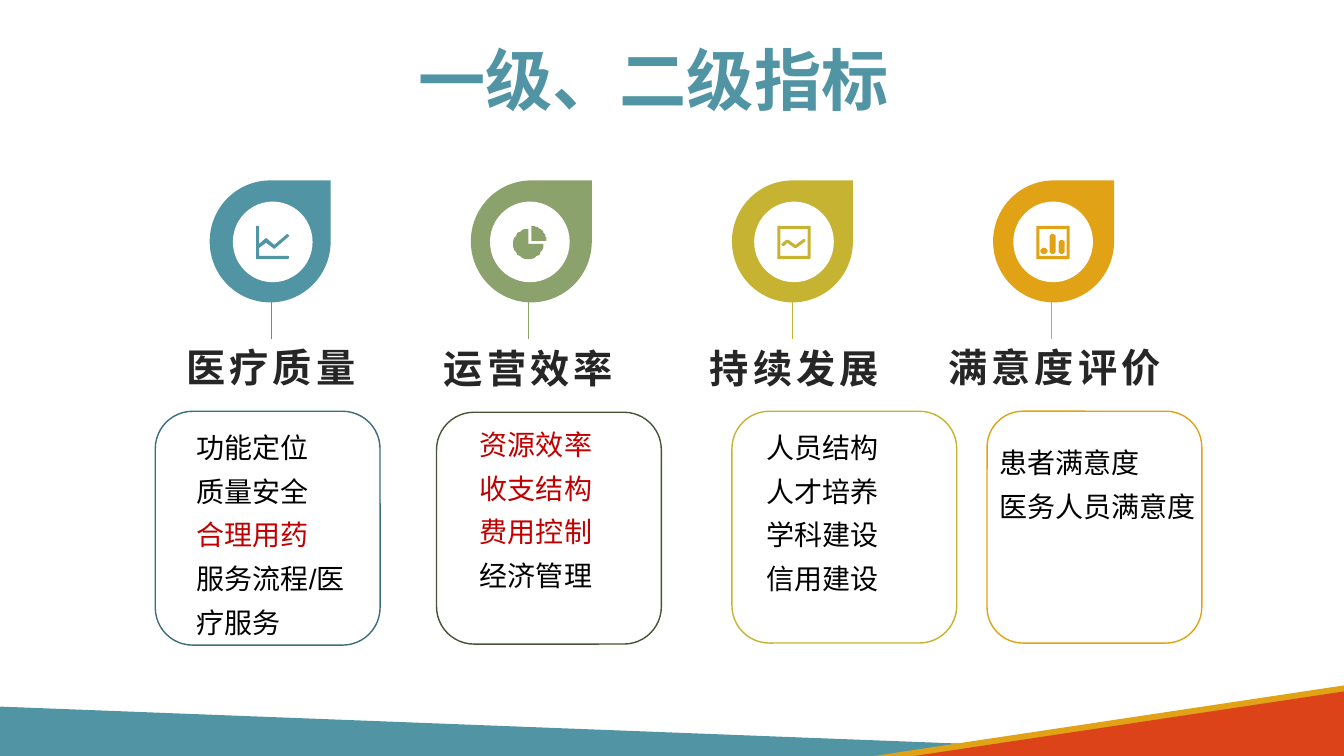
from math import cos, pi, sin

from lxml.etree import SubElement
from pptx import Presentation
from pptx.dml.color import RGBColor
from pptx.enum.shapes import MSO_CONNECTOR, MSO_SHAPE as SHAPE
from pptx.enum.text import MSO_ANCHOR as ANCHOR, MSO_AUTO_SIZE as AUTO_SIZE, PP_ALIGN as ALIGN
from pptx.oxml.ns import qn
from pptx.util import Inches, Pt

TEAL = RGBColor(0x51, 0x95, 0xA5)
GREEN = RGBColor(0x8C, 0xA2, 0x6C)
OLIVE = RGBColor(0xC5, 0xB3, 0x31)
AMBER = RGBColor(0xE1, 0xA2, 0x15)
ORANGE = RGBColor(0xDD, 0x43, 0x19)
DARK_TEAL = RGBColor(0x3C, 0x6E, 0x7A)
DARK_GREEN = RGBColor(0x46, 0x53, 0x34)
WHITE = RGBColor(0xFF, 0xFF, 0xFF)
BLACK = RGBColor(0, 0, 0)
CHARCOAL = RGBColor(0x26, 0x26, 0x26)
RED = RGBColor(0xC0, 0, 0)
FONT = "Arial"
UNIT = Inches(0.01)


def box(left, top, right, bottom):
    return [(left, top), (right, top), (right, bottom), (left, bottom)]


def soft_box(left, top, right, bottom, cut=2):
    """Corners of a box with its four corners cut off."""
    return [(left + cut, top), (right - cut, top), (right, top + cut), (right, bottom - cut),
            (right - cut, bottom), (left + cut, bottom), (left, bottom - cut), (left, top + cut)]


def pie_sector(x, y, radius, start, sweep):
    """Centre and arc points; angles in degrees, clockwise from the right."""
    angles = [(start + sweep * step / 24) * pi / 180 for step in range(25)]
    return [(x, y)] + [(x + radius * cos(a), y + radius * sin(a)) for a in angles]


# Icon outlines in hundredths of an inch
FRAME = [soft_box(0, 0, 33, 33, 0.5), box(3, 3, 30, 30)]
LINE_CHART = [[(0, 0.5), (1.5, 0), (3, 1), (3, 18), (10, 12.5), (18, 19), (31, 8), (33, 9.5),
               (32, 11), (18, 23), (10, 17), (3, 22.5), (3, 29.5), (32, 29.5), (33, 31),
               (32, 33), (0.5, 33), (0, 32)]]
PIE_CHART = [pie_sector(18, 15, 15, -90, 90), pie_sector(15, 18, 15, 0, 270)]
WAVE_CHART = FRAME + [[(4, 18), (9, 14), (11, 14), (18, 19), (26, 13), (28, 14), (27, 16.5),
                       (19, 22), (17, 22), (10, 17), (7, 20), (5, 20)]]
BAR_CHART = FRAME + [soft_box(4, 22, 11, 28), soft_box(13, 8, 19, 28), soft_box(22, 14, 28, 28)]

# Each indicator: heading, (heading left, top, width), colour, teardrop left, stem x,
# icon, (frame left, top, width, height), frame colour, (list left, top, width, height),
# second-level items, items in red
INDICATORS = [
    ("医疗质量", (1.02, 3.43, 3.33), TEAL, 2.08, 2.69, LINE_CHART,
     (1.54, 4.08, 2.23, 2.32), DARK_TEAL, (1.85, 4.12, 1.86, 2.29),
     ["功能定位", "质量安全", "合理用药", "服务流程/医疗服务"], {"合理用药"}),
    ("运营效率", (3.86, 3.44, 2.76), GREEN, 4.67, 5.24, PIE_CHART,
     (4.33, 4.09, 2.23, 2.3), DARK_GREEN, (4.66, 4.09, 1.78, 1.85),
     ["资源效率", "收支结构", "费用控制", "经济管理"], {"资源效率", "收支结构", "费用控制"}),
    ("持续发展", (6.53, 3.44, 2.7), OLIVE, 7.26, 7.86, WAVE_CHART,
     (7.26, 4.08, 2.23, 2.3), OLIVE, (7.5, 4.12, 1.78, 1.85),
     ["人员结构", "人才培养", "学科建设", "信用建设"], set()),
    ("满意度评价", (9.01, 3.43, 2.9), AMBER, 9.85, 10.43, BAR_CHART,
     (9.79, 4.08, 2.13, 2.3), AMBER, (9.81, 4.27, 2.35, 0.97),
     ["患者满意度", "医务人员满意度"], set()),
]


def place(holder, left, top, width, height):
    holder.left, holder.top = Inches(left), Inches(top)
    holder.width, holder.height = Inches(width), Inches(height)


def set_font(paragraph, size, color, bold=False):
    font = paragraph.font
    font.name, font.size, font.bold = FONT, Pt(size), bold
    font.color.rgb = color


def prepare_frame(frame, anchor):
    frame.word_wrap = True
    frame.auto_size = AUTO_SIZE.NONE
    frame.vertical_anchor = anchor


def add_outline(slide, contours, color, left=0, top=0):
    """Filled freeform of one or more contours, in hundredths of an inch."""
    builder = slide.shapes.build_freeform(*contours[0][0], scale=UNIT)
    builder.add_line_segments(contours[0][1:])
    for contour in contours[1:]:
        builder.move_to(*contour[0])
        builder.add_line_segments(contour[1:])
    outline = builder.convert_to_shape(Inches(left), Inches(top))
    outline.shadow.inherit = False
    outline.fill.solid()
    outline.fill.fore_color.rgb = color
    outline.line.fill.background()


def add_preset(slide, preset, bounds, fill=None, line=None):
    shape = slide.shapes.add_shape(preset, *map(Inches, bounds))
    shape.shadow.inherit = False
    if fill is None:
        shape.fill.background()
    else:
        shape.fill.solid()
        shape.fill.fore_color.rgb = fill
    if line is None:
        shape.line.fill.background()
    else:
        shape.line.color.rgb = line
        shape.line.width = Pt(1)


def add_stem(slide, x, color):
    stem = slide.shapes.add_connector(
        MSO_CONNECTOR.STRAIGHT, Inches(x), Inches(3), Inches(x), Inches(3.36))
    stem.line.color.rgb = color
    stem.line.width = Pt(1)
    SubElement(stem._element.spPr, qn("a:effectLst"))


def add_badge(slide, left, stem_x, icon, color):
    """Teardrop with a stem and a white disc that holds the icon."""
    disc_left = stem_x - 0.38
    add_preset(slide, SHAPE.TEAR, (left, 1.79, 1.2, 1.21), fill=color)
    add_stem(slide, stem_x, color)
    add_preset(slide, SHAPE.OVAL, (disc_left, 2, 0.79, 0.8), fill=WHITE)
    add_outline(slide, icon, color, disc_left + 0.23, 2.24)


def add_heading(slide, text, left, top, width):
    heading = slide.shapes.add_textbox(*map(Inches, (left, top, width, 0.44)))
    frame = heading.text_frame
    prepare_frame(frame, ANCHOR.BOTTOM)
    frame.margin_bottom = 0
    paragraph = frame.paragraphs[0]
    paragraph.text = text
    paragraph.alignment = ALIGN.CENTER
    paragraph.line_spacing = 1.2
    set_font(paragraph, 28, CHARCOAL, bold=True)
    paragraph.runs[0]._r.get_or_add_rPr().set("spc", "300")


def fill_list(holder, bounds, items, red_items):
    place(holder, *bounds)
    frame = holder.text_frame
    prepare_frame(frame, ANCHOR.TOP)
    frame.text = "\n".join(items)
    for paragraph in frame.paragraphs:
        paragraph.line_spacing = 1.3
        paragraph.space_before = Pt(0)
        paragraph.alignment = ALIGN.LEFT
        properties = paragraph._p.get_or_add_pPr()
        properties.set("marL", "0")
        properties.set("indent", "0")
        SubElement(properties, qn("a:buNone"))
        set_font(paragraph, 20, RED if paragraph.text in red_items else BLACK)


def fill_title(title):
    place(title, 1.3, 0.42, 10.36, 0.7)
    prepare_frame(title.text_frame, ANCHOR.TOP)
    title.text_frame.text = "一级、二级指标"
    paragraph = title.text_frame.paragraphs[0]
    paragraph.alignment = ALIGN.CENTER
    paragraph.line_spacing = 0.9
    set_font(paragraph, 48, TEAL, bold=True)


def main():
    deck = Presentation()
    deck.slide_width, deck.slide_height = Inches(13.33), Inches(7.5)
    slide = deck.slides.add_slide(deck.slide_layouts.get_by_name("Comparison"))
    title, *lists = list(slide.placeholders)[:5]

    add_outline(slide, [[(1271, 750), (0, 750), (0, 701)]], TEAL)
    add_outline(slide, [[(867, 750), (1333, 750), (1333, 680)]], AMBER)
    add_outline(slide, [[(907, 750), (1333, 750), (1333, 686)]], ORANGE)
    fill_title(title)
    for holder, indicator in zip(lists, INDICATORS):
        (heading, heading_place, color, drop_left, stem_x, icon,
         frame_bounds, frame_color, list_bounds, items, red_items) = indicator
        add_heading(slide, heading, *heading_place)
        add_badge(slide, drop_left, stem_x, icon, color)
        add_preset(slide, SHAPE.ROUNDED_RECTANGLE, frame_bounds, line=frame_color)
        fill_list(holder, list_bounds, items, red_items)
    deck.save("out.pptx")


if __name__ == "__main__":
    main()
